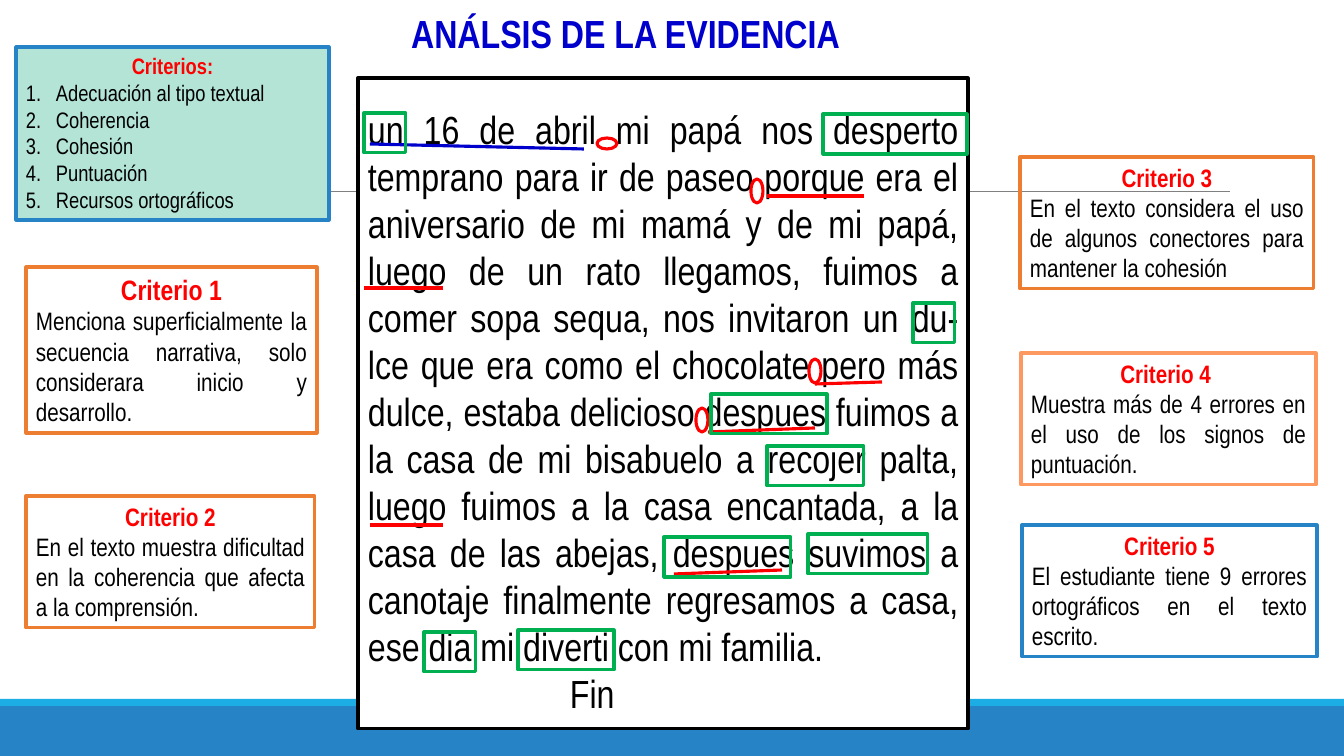
from lxml.etree import SubElement
from pptx import Presentation
from pptx.dml.color import RGBColor
from pptx.enum.shapes import MSO_CONNECTOR, MSO_SHAPE as SHAPE
from pptx.enum.text import MSO_ANCHOR, PP_ALIGN as ALIGN
from pptx.oxml.ns import qn
from pptx.util import Emu, Pt

WIDTH, HEIGHT = 1344, 756
BLACK, WHITE, RED, GREEN = "000000", "FFFFFF", "FF0000", "00B050"
BLUE, ORANGE, INK_BLUE = "2683C6", "ED7D31", "0000CC"


def px(length):
    return Emu(round(length * 914400 / 100.8))


def rgb(color):
    return RGBColor.from_string(color)


class Board:
    """Holds the slide together with its font and outline width."""

    def __init__(self, slide, font="Arial Narrow", stroke=2.25):
        self.slide, self.font, self.stroke = slide, font, stroke

    def shape(self, kind, box, fill=None, outline=None):
        shape = self.slide.shapes.add_shape(kind, *map(px, box))
        shape.shadow.inherit = False
        if fill:
            shape.fill.solid()
            shape.fill.fore_color.rgb = rgb(fill)
        else:
            shape.fill.background()
        if outline:
            shape.line.color.rgb = rgb(outline)
            shape.line.width = Pt(self.stroke)
        else:
            shape.line.fill.background()
        return shape

    def line(self, start, end, color, width=None):
        line = self.slide.shapes.add_connector(
            MSO_CONNECTOR.STRAIGHT, *map(px, start + end))
        line.line.color.rgb = rgb(color)
        line.line.width = Pt(width or self.stroke)
        SubElement(line._element.spPr, qn("a:effectLst"))

    def panel(self, box, fill=None, outline=None, top_inset=5):
        """Adds a rectangle and returns its text frame, ready for paragraphs."""
        frame = self.shape(SHAPE.RECTANGLE, box, fill, outline).text_frame
        self.prepare(frame, top_inset)
        return frame

    def title(self, box, text, size, color):
        frame = self.slide.shapes.add_textbox(*map(px, box)).text_frame
        self.prepare(frame)
        self.paragraph(frame, text, size, color, ALIGN.CENTER, bold=True)

    def prepare(self, frame, top_inset=5):
        frame.word_wrap = True
        frame.vertical_anchor = MSO_ANCHOR.TOP
        frame.margin_top = px(top_inset)

    def paragraph(self, frame, text, size, color=BLACK, align=ALIGN.JUSTIFY,
                  bold=False, indent=0, numbered=False):
        first = frame.paragraphs[0]
        paragraph = frame.add_paragraph() if first.runs else first
        paragraph.alignment = align
        run = paragraph.add_run()
        run.text = text
        run.font.name, run.font.size, run.font.bold = self.font, Pt(size), bold
        run.font.color.rgb = rgb(color)
        properties = paragraph._p.get_or_add_pPr()
        if indent:
            properties.set("marL", str(px(indent)))
        if numbered:
            properties.set("indent", str(-px(indent)))
            SubElement(properties, qn("a:buFont"), typeface="+mj-lt")
            SubElement(properties, qn("a:buAutoNum"), type="arabicPeriod")


CRITERIA = [
    ((26, 267, 291, 166), None, ORANGE, "Criterio 1", 20,
     "Menciona superficialmente la secuencia narrativa, solo considerara "
     "inicio y desarrollo."),
    ((26, 496, 289, 132), None, ORANGE, "Criterio 2", 18,
     "En el texto muestra dificultad en la coherencia que afecta a la "
     "comprensión."),
    ((1020, 157, 294, 132), None, ORANGE, "Criterio 3", 18,
     "En el texto considera el uso de algunos conectores para mantener la "
     "cohesión "),
    ((1021, 353, 295, 132), WHITE, "FC9860", "Criterio 4 ", 18,
     "Muestra más de 4 errores en el uso de los signos de puntuación."),
    ((1022, 525, 295, 132), None, BLUE, "Criterio 5", 18,
     "El estudiante tiene 9 errores ortográficos en el texto escrito."),
]
CRITERIA_NAMES = ["Adecuación al tipo textual", "Coherencia", "Cohesión",
                  "Puntuación", "Recursos ortográficos"]
STORY = (
    "un 16 de abril mi papá nos desperto temprano para ir de paseo porque era "
    "el aniversario de mi mamá y de mi papá, luego de un rato llegamos, fuimos "
    "a comer sopa sequa, nos invitaron un du-lce que era como el chocolate "
    "pero más dulce, estaba delicioso despues fuimos a la casa de mi bisabuelo "
    "a recojer palta, luego fuimos a la casa encantada, a la casa de las "
    "abejas, despues suvimos a canotaje finalmente regresamos a casa, ese dia "
    "mi diverti con mi familia.")
CONNECTOR_UNDERLINES = [
    ((767, 196), (864, 196)), ((364, 288), (443, 288)),
    ((815, 384), (882, 382)), ((708, 432), (815, 428)),
    ((370, 525), (443, 525)), ((674, 574), (782, 570)),
]
MISSING_PUNCTUATION = [(597, 138, 20, 11), (751, 179, 12, 24),
                       (809, 359, 12, 24), (696, 408, 12, 24)]
# left, top and width of each misspelled word
MISSPELLINGS = [(364, 113, 42), (823, 114, 144), (913, 303, 42),
                (711, 394, 116), (767, 446, 97), (664, 537, 127),
                (808, 534, 120), (424, 632, 52), (518, 630, 96)]


def main():
    deck = Presentation()
    deck.slide_width, deck.slide_height = px(WIDTH), px(HEIGHT)
    board = Board(deck.slides.add_slide(deck.slide_layouts[6]))

    board.shape(SHAPE.RECTANGLE, (0, 706, WIDTH, 50), BLUE)
    board.shape(SHAPE.RECTANGLE, (0, 699, WIDTH, 7), "1CADE4")
    board.line((132, 191), (1230, 191), "808080", 0.5)

    for box, fill, outline, heading, size, finding in CRITERIA:
        criterion = board.panel(box, fill, outline)
        board.paragraph(criterion, heading, size, RED, ALIGN.CENTER, bold=True)
        board.paragraph(criterion, finding, 18)

    board.title((355, 4, 541, 57), "ANÁLSIS DE LA EVIDENCIA", 28, INK_BLUE)

    summary = board.panel((16, 47, 313, 173), "B3E4D6", BLUE)
    board.paragraph(summary, "Criterios:", 16, RED, ALIGN.CENTER, bold=True)
    for name in CRITERIA_NAMES:
        board.paragraph(summary, name, 16, align=ALIGN.LEFT, indent=30,
                        numbered=True)

    evidence = board.panel((358, 78, 610, 651), WHITE, BLACK, top_inset=27)
    board.paragraph(evidence, STORY, 28)
    board.paragraph(evidence, "Fin", 28, indent=202)

    board.line((370, 144), (584, 149), INK_BLUE)
    for start, end in CONNECTOR_UNDERLINES:
        board.line(start, end, RED)
    for box in MISSING_PUNCTUATION:
        board.shape(SHAPE.OVAL, box, WHITE, RED)
    for left, top, width in MISSPELLINGS:
        board.shape(SHAPE.RECTANGLE, (left, top, width, 40), outline=GREEN)

    deck.save("out.pptx")


if __name__ == "__main__":
    main()
